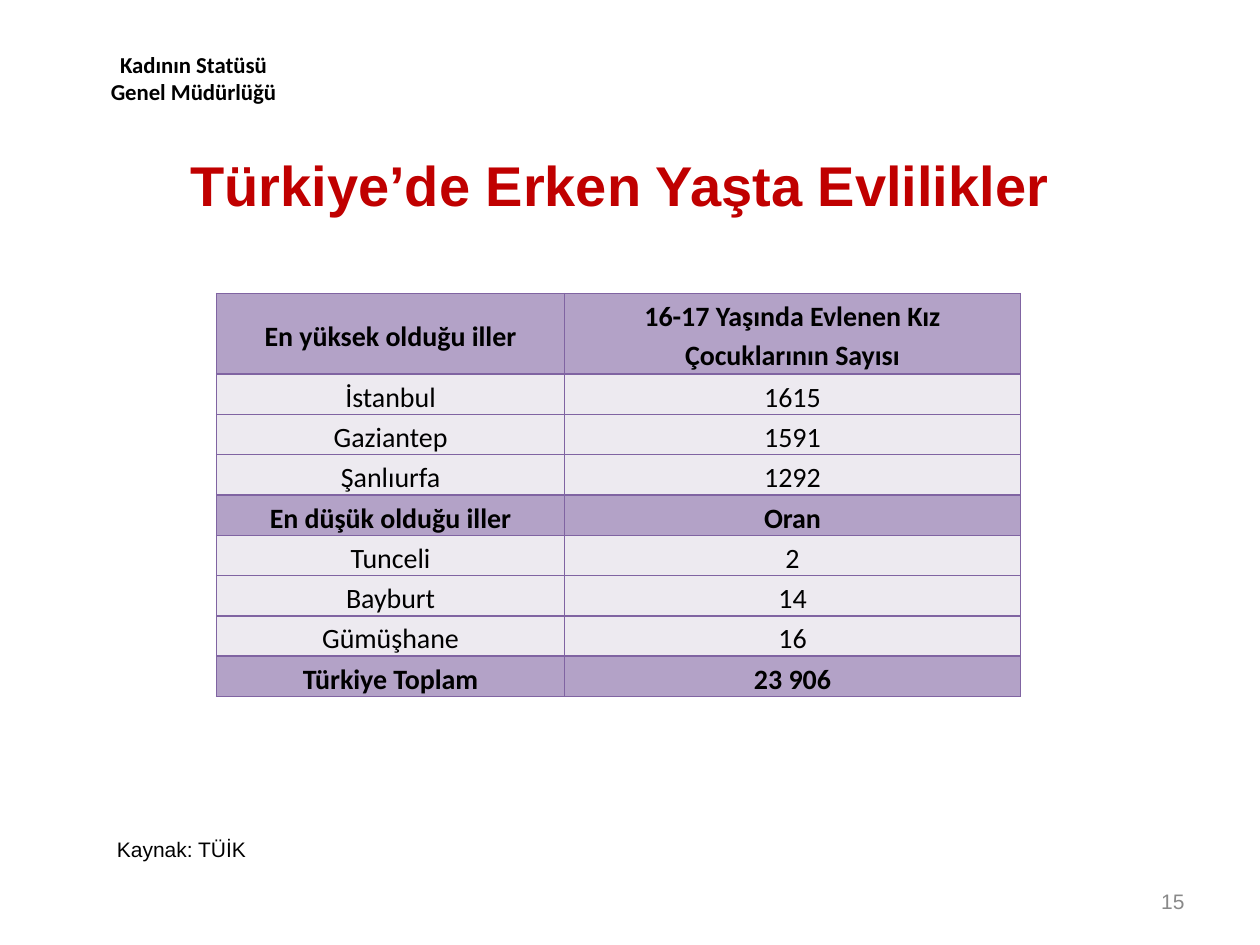
from lxml import etree
from pptx import Presentation
from pptx.dml.color import RGBColor
from pptx.enum.text import MSO_ANCHOR, PP_ALIGN
from pptx.oxml.ns import qn
from pptx.util import Inches, Pt

BLACK = RGBColor(0x00, 0x00, 0x00)
RED = RGBColor(0xC0, 0x00, 0x00)
GRAY = RGBColor(0x89, 0x89, 0x89)
PURPLE = RGBColor(0xB3, 0xA2, 0xC7)
PALE = RGBColor(0xED, 0xEA, 0xF0)
BORDER = RGBColor(0x80, 0x64, 0xA2)


def write(tf, text, align, name, size, color, bold=False):
    tf.word_wrap = True
    p = tf.paragraphs[0]
    p.alignment = align
    r = p.add_run()
    r.text = text
    r.font.color.rgb = color
    for key, value in {"name": name, "size": Pt(size), "bold": bold}.items():
        setattr(r.font, key, value)
    return p


def add_borders(cell):
    tcPr = cell._tc.get_or_add_tcPr()
    for i, side in enumerate(("lnL", "lnR", "lnT", "lnB")):
        ln = etree.Element(qn(f"a:{side}"), w=str(Pt(1)))
        fill = etree.SubElement(ln, qn("a:solidFill"))
        etree.SubElement(fill, qn("a:srgbClr"), val=str(BORDER))
        tcPr.insert(i, ln)


prs = Presentation()
prs.slide_width = Inches(10)
prs.slide_height = Inches(7.5)
s = prs.slides.add_slide(prs.slide_layouts[5])

title = s.shapes.title
bounds = {"left": 0.11, "top": 1.15, "width": 9.22, "height": 0.63}
for key, value in bounds.items():
    setattr(title, key, Inches(value))
tf = title.text_frame
tf.margin_left = Inches(0.5)
tf.vertical_anchor = MSO_ANCHOR.MIDDLE
write(tf, "Türkiye’de Erken Yaşta Evlilikler", PP_ALIGN.CENTER, "Arial", 32, RED, True)

header = s.shapes.add_textbox(Inches(0.67), Inches(0.13), Inches(1.73), Inches(0.76))
header.text_frame.margin_top = Inches(0.27)
write(header.text_frame, "Kadının Statüsü Genel Müdürlüğü", PP_ALIGN.CENTER,
      "Calibri", 13, BLACK, True)

number = s.shapes.add_textbox(Inches(7.17), Inches(6.95), Inches(2.33), Inches(0.4))
number.text_frame.vertical_anchor = MSO_ANCHOR.MIDDLE
write(number.text_frame, "15", PP_ALIGN.RIGHT, "Arial", 12, GRAY)

rows = [
    ("En yüksek olduğu iller", "16-17 Yaşında Evlenen Kız Çocuklarının Sayısı"),
    ("İstanbul", "1615"),
    ("Gaziantep", "1591"),
    ("Şanlıurfa", "1292"),
    ("En düşük olduğu iller", "Oran"),
    ("Tunceli", "2"),
    ("Bayburt", "14"),
    ("Gümüşhane", "16"),
    ("Türkiye Toplam", "23 906"),
]
heading_rows = (0, 4, 8)
margins = {"margin_left": 0.07, "margin_top": 0.01, "margin_right": 0.07, "margin_bottom": 0}

table = s.shapes.add_table(len(rows), 2, Inches(1.72), Inches(2.33),
                           Inches(6.38), Inches(3.2)).table
table.horz_banding = False
for col, width in zip(table.columns, (2.76, 3.62)):
    col.width = Inches(width)

for i, texts in enumerate(rows):
    heading = i in heading_rows
    table.rows[i].height = Inches(0.64 if i == 0 else 0.32)
    for j, text in enumerate(texts):
        cell = table.cell(i, j)
        for key, value in margins.items():
            setattr(cell, key, Inches(value))
        middle = (i == 0) == (j == 0)
        cell.vertical_anchor = MSO_ANCHOR.MIDDLE if middle else MSO_ANCHOR.TOP
        cell.fill.solid()
        cell.fill.fore_color.rgb = PURPLE if heading else PALE
        add_borders(cell)
        p = write(cell.text_frame, text, PP_ALIGN.CENTER, "Calibri", 16, BLACK, heading)
        p.line_spacing = 1.15
        p.space_after = Pt(10)

source = s.shapes.add_textbox(Inches(0.83), Inches(6.59), Inches(1.81), Inches(0.3))
write(source.text_frame, "Kaynak: TÜİK", PP_ALIGN.LEFT, "Arial", 12, BLACK)

prs.save("out.pptx")
